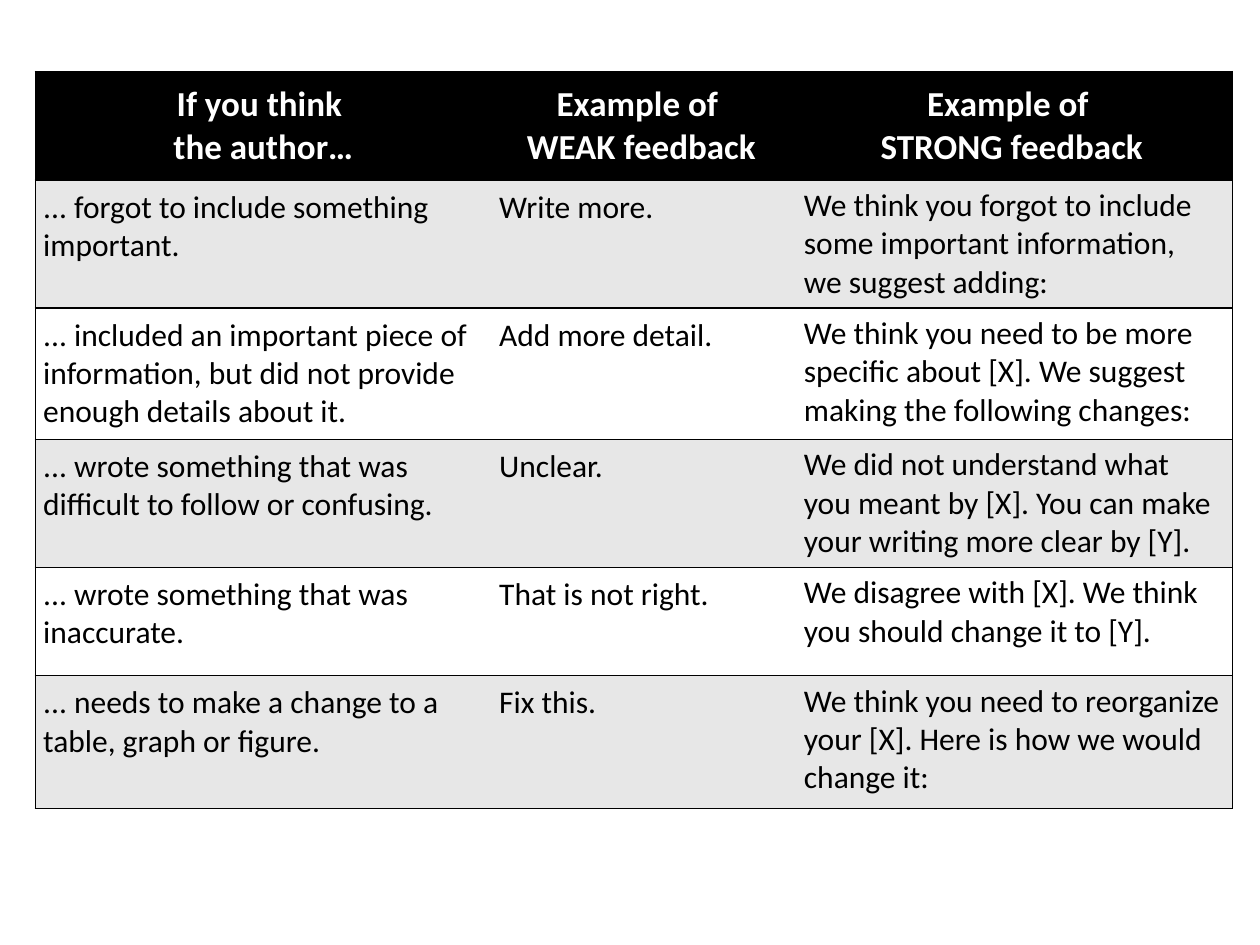
import pptx
import pptx.util
import pptx.dml.color
import pptx.enum.text
import pptx.oxml
import pptx.oxml.ns

Pt = pptx.util.Pt
RGB = pptx.dml.color.RGBColor.from_string
ALIGN = pptx.enum.text.PP_ALIGN
ANCHOR = pptx.enum.text.MSO_ANCHOR

COLORS = {"black": "000000", "white": "FFFFFF", "band": "E7E7E7"}

ROWS = [
    ("If you think \nthe author…",
     "Example of \nWEAK feedback",
     "Example of \nSTRONG feedback"),
    ("... forgot to include something important.",
     "Write more.",
     "We think you forgot to include some important information, we suggest adding:"),
    ("... included an important piece of information, but did not provide "
     "enough details about it.",
     "Add more detail.",
     "We think you need to be more specific about [X]. "
     "We suggest making the following changes:"),
    ("... wrote something that was difficult to follow or confusing.",
     "Unclear.",
     "We did not understand what you meant by [X]. "
     "You can make your writing more clear by [Y]."),
    ("... wrote something that was inaccurate.",
     "That is not right.",
     "We disagree with [X]. We think you should change it to [Y]."),
    ("... needs to make a change to a table, graph or figure.",
     "Fix this.",
     "We think you need to reorganize your [X]. Here is how we would change it:"),
]
COLUMN_WIDTHS = [260.6, 171.4, 252]
ROW_HEIGHTS = [62] * 5 + [76]
LEFT, TOP, HEIGHT = 20.2, 41, 416
SMALL_INSET = 4.5

HEADER_FONT = {"name": "Calibri", "size": Pt(20), "bold": True}
BODY_FONT = {"name": "Calibri", "size": Pt(18), "bold": False}


def add_borders(cell, visible_sides):
    properties = cell._tc.get_or_add_tcPr()
    for side in "LRTB":
        paint = "<a:noFill/>"
        if side in visible_sides:
            paint = f'<a:solidFill><a:srgbClr val="{COLORS["black"]}"/></a:solidFill>'
        properties.append(pptx.oxml.parse_xml(
            f'<a:ln{side} {pptx.oxml.ns.nsdecls("a")} w="{Pt(1)}">{paint}</a:ln{side}>'))


def fill_cell(cell, text, row, column):
    header = row == 0
    sides = "TB" + {0: "L", len(COLUMN_WIDTHS) - 1: "R"}.get(column, "")
    add_borders(cell, sides)
    cell.fill.solid()
    fill = "black" if header else "band" if row % 2 else "white"
    cell.fill.fore_color.rgb = RGB(COLORS[fill])
    cell.vertical_anchor = ANCHOR.MIDDLE if header else ANCHOR.TOP
    if not header and column < 2:
        for side in ("left", "right", "top", "bottom"):
            setattr(cell, f"margin_{side}", Pt(SMALL_INSET))
    cell.text_frame.text = text
    for para in cell.text_frame.paragraphs:
        para.alignment = ALIGN.CENTER if header else ALIGN.LEFT
        for span in para.runs:
            for name, value in (HEADER_FONT if header else BODY_FONT).items():
                setattr(span.font, name, value)
            span.font.color.rgb = RGB(COLORS["white" if header else "black"])


def main():
    deck = pptx.Presentation()
    deck.slide_width, deck.slide_height = Pt(720), Pt(540)
    page = deck.slides.add_slide(deck.slide_layouts[6])
    frame = page.shapes.add_table(
        len(ROWS), len(COLUMN_WIDTHS),
        Pt(LEFT), Pt(TOP), Pt(sum(COLUMN_WIDTHS)), Pt(HEIGHT))
    table = frame.table
    table.horz_banding = False
    for column, width in zip(table.columns, COLUMN_WIDTHS):
        column.width = Pt(width)
    for row, height in zip(table.rows, ROW_HEIGHTS):
        row.height = Pt(height)
    frame.height = Pt(HEIGHT)
    for row, texts in enumerate(ROWS):
        for column, text in enumerate(texts):
            fill_cell(table.cell(row, column), text, row, column)
    deck.save("out.pptx")


if __name__ == "__main__":
    main()
